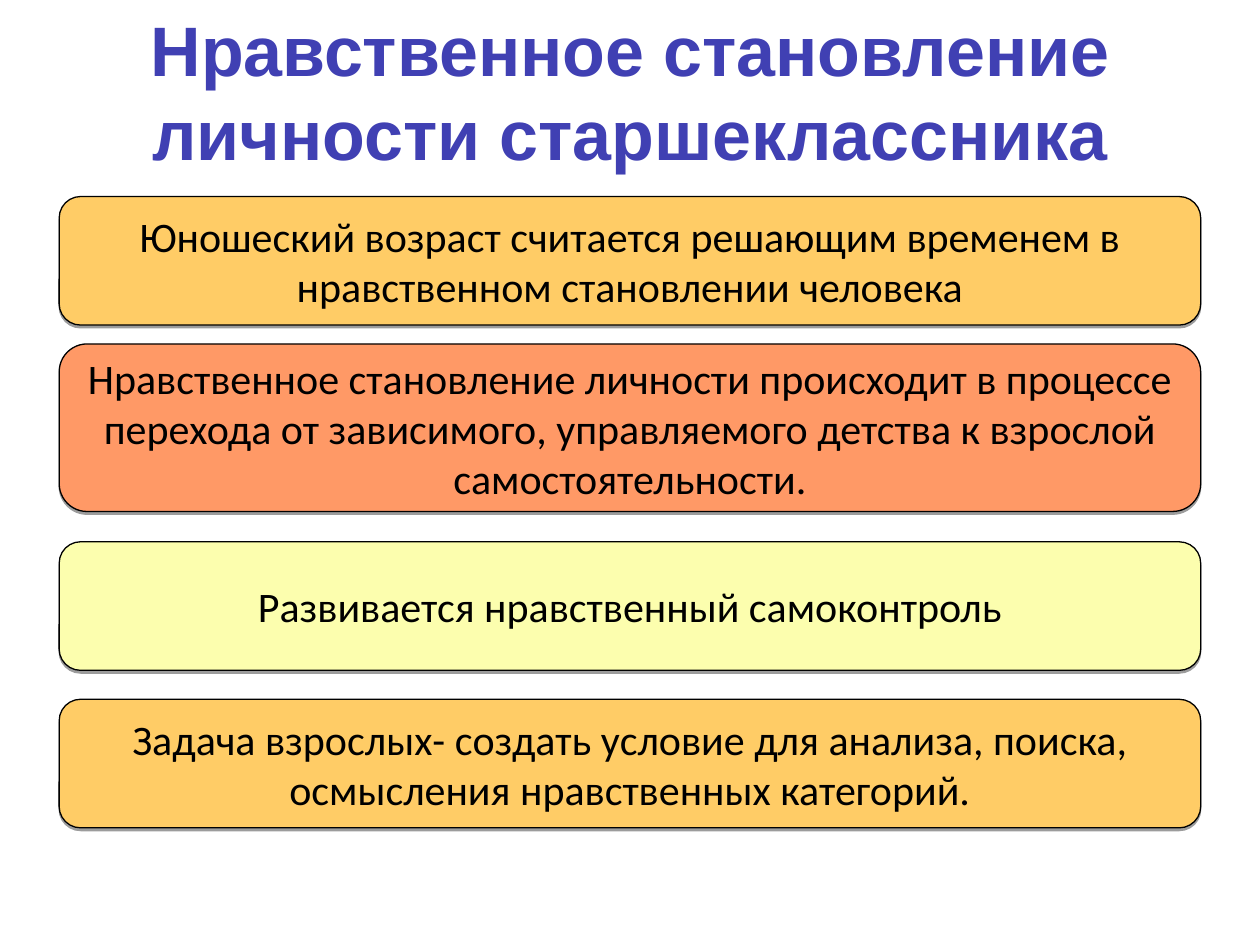
from pptx import Presentation
from pptx.dml.color import RGBColor
from pptx.enum.shapes import MSO_SHAPE
from pptx.enum.text import MSO_ANCHOR, PP_ALIGN
from pptx.oxml import parse_xml
from pptx.oxml.ns import nsdecls, qn
from pptx.util import Inches, Pt

ROUNDED = MSO_SHAPE.ROUNDED_RECTANGLE
CENTER = PP_ALIGN.CENTER
MIDDLE, TOP = MSO_ANCHOR.MIDDLE, MSO_ANCHOR.TOP

TITLE = "Нравственное становление личности старшеклассника"
TITLE_FONT = {"name": "Arial", "size": Pt(40), "bold": True}
TITLE_STOPS = [(0, "00005B"), (78, "4040B3"), (100, "EFEFF7")]
THESIS_FONT = {"name": "Calibri", "size": Pt(24)}

# Text, fill, top and height of each thesis
THESES = [
    ("Юношеский возраст считается решающим временем в нравственном "
     "становлении человека", "FFCC66", 1.56, 1.02),
    ("Нравственное становление личности происходит в процессе перехода от "
     "зависимого, управляемого детства к взрослой самостоятельности.",
     "FF9966", 2.73, 1.33),
    ("Развивается нравственный самоконтроль", "FCFEAE", 4.3, 1.02),
    ("Задача взрослых- создать условие для анализа, поиска, осмысления "
     "нравственных категорий.", "FFCC66", 5.55, 1.02),
]


def color(hex_value):
    return RGBColor.from_string(hex_value)


def write_text(shape, text, font_values, anchor):
    frame = shape.text_frame
    frame.word_wrap = True
    frame.vertical_anchor = anchor
    paragraph = frame.paragraphs[0]
    paragraph.alignment = CENTER
    run = paragraph.add_run()
    run.text = text
    for key, value in font_values.items():
        setattr(run.font, key, value)
    return run


def fill_with_gradient(run, stops):
    """Vertical gradient on the letters, from top to bottom."""
    run.font.fill.gradient()
    run.font.fill.gradient_angle = 270
    stop_list = run.font.fill._xPr.find(".//" + qn("a:gsLst"))
    for stop in list(stop_list):
        stop_list.remove(stop)
    for percent, hex_value in stops:
        stop_list.append(parse_xml(
            f'<a:gs {nsdecls("a")} pos="{percent * 1000}">'
            f'<a:srgbClr val="{hex_value}"/></a:gs>'))


def add_drop_shadow(shape):
    shape._element.spPr.append(parse_xml(
        f'<a:effectLst {nsdecls("a")}>'
        f'<a:outerShdw blurRad="0" dist="{Pt(1.6)}" dir="5400000" '
        'rotWithShape="0"><a:srgbClr val="000000"><a:alpha val="38000"/>'
        '</a:srgbClr></a:outerShdw></a:effectLst>'))


def add_title(slide, left, top, width, height):
    title = slide.shapes.add_textbox(left, top, width, height)
    run = write_text(title, TITLE, TITLE_FONT, TOP)
    fill_with_gradient(run, TITLE_STOPS)


def add_thesis(slide, text, fill, left, top, width, height):
    thesis = slide.shapes.add_shape(ROUNDED, left, top, width, height)
    thesis.fill.solid()
    thesis.fill.fore_color.rgb = color(fill)
    thesis.line.color.rgb = color("000000")
    thesis.line.width = Pt(0.75)
    add_drop_shadow(thesis)
    run = write_text(thesis, text, THESIS_FONT, MIDDLE)
    run.font.color.rgb = color("000000")


def main():
    presentation = Presentation()
    presentation.slide_width = Inches(10)
    presentation.slide_height = Inches(7.5)
    slide = presentation.slides.add_slide(presentation.slide_layouts[6])

    # Heading
    add_title(slide, 0, 0, Inches(10), Inches(1.45))

    # Stack of theses
    for text, fill, top, height in THESES:
        add_thesis(slide, text, fill, Inches(0.47), Inches(top),
                   Inches(9.06), Inches(height))

    presentation.save("out.pptx")


if __name__ == "__main__":
    main()
